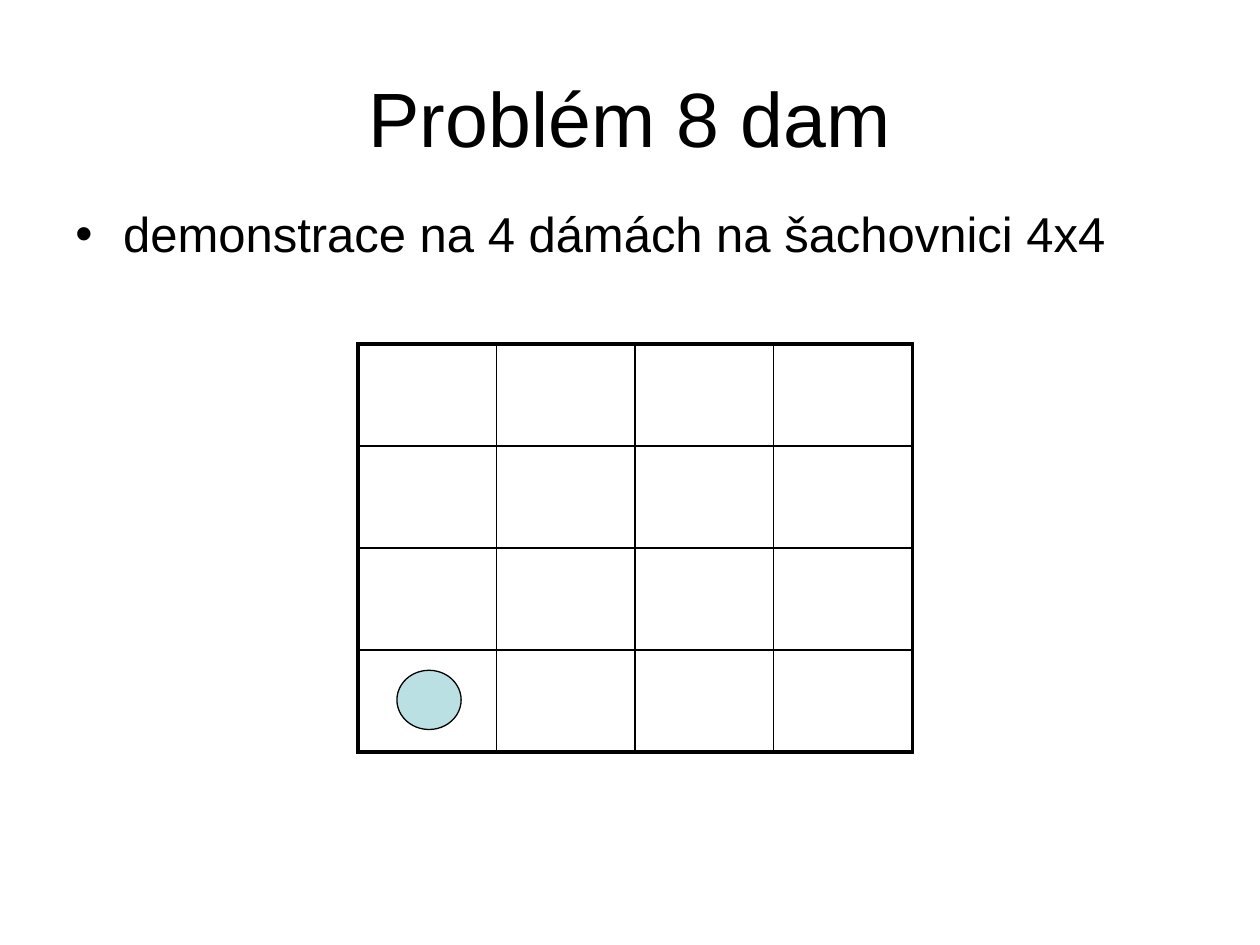
from dataclasses import dataclass

from lxml.etree import SubElement
from pptx import Presentation
from pptx.dml.color import RGBColor
from pptx.enum.shapes import MSO_SHAPE as Shape
from pptx.enum.text import MSO_ANCHOR as Anchor, PP_ALIGN as Align
from pptx.oxml.ns import qn
from pptx.util import Inches, Pt

TITLE = "Problém 8 dam"
BULLETS = ["demonstrace na 4 dámách na šachovnici 4x4"]
BOARD_SIZE = 4
QUEENS = [(3, 0)]

BOARD_LEFT, BOARD_TOP = 2.84, 2.73
CELL_WIDTH, CELL_HEIGHT = 1.1, 0.81
QUEEN_WIDTH, QUEEN_HEIGHT = 0.51, 0.47
QUEEN_INSET_X, QUEEN_INSET_Y = 0.31, 0.16


@dataclass(frozen=True)
class Theme:
    font: str = "Arial"
    ink: str = "000000"
    queen: str = "BBE0E3"
    title_size: float = 44
    body_size: float = 28
    outer_line: float = 2.25
    inner_line: float = 1
    queen_line: float = 0.75


THEME = Theme()


def add_text(page, lines, area, size, anchor, align):
    box = page.shapes.add_textbox(*map(Inches, area))
    frame = box.text_frame
    frame.word_wrap = True
    frame.vertical_anchor = anchor
    frame.text = "\n".join(lines)
    for para in frame.paragraphs:
        para.alignment = align
        for span in para.runs:
            span.font.name = THEME.font
            span.font.size = Pt(size)
            span.font.color.rgb = RGBColor.from_string(THEME.ink)
    return frame


def add_bullet(para):
    para.line_spacing = 0.9
    para.space_before = Pt(THEME.body_size * 0.2)
    properties = para._p.get_or_add_pPr()
    properties.set("marL", str(Inches(0.38)))
    properties.set("indent", str(-Inches(0.38)))
    SubElement(properties, qn("a:buFont"), typeface=THEME.font)
    SubElement(properties, qn("a:buChar"), char="•")


def add_borders(cell, row, column):
    last = BOARD_SIZE - 1
    outer_sides = {
        "a:lnL": column == 0,
        "a:lnR": column == last,
        "a:lnT": row == 0,
        "a:lnB": row == last,
    }
    properties = cell._tc.get_or_add_tcPr()
    for side, outer in outer_sides.items():
        width = THEME.outer_line if outer else THEME.inner_line
        line = SubElement(properties, qn(side), w=str(Pt(width)))
        fill = SubElement(line, qn("a:solidFill"))
        SubElement(fill, qn("a:srgbClr"), val=THEME.ink)


def add_board(page):
    table = page.shapes.add_table(
        BOARD_SIZE, BOARD_SIZE, Inches(BOARD_LEFT), Inches(BOARD_TOP),
        Inches(CELL_WIDTH * BOARD_SIZE), Inches(CELL_HEIGHT * BOARD_SIZE),
    ).table
    table.first_row = table.horz_banding = False
    for row in range(BOARD_SIZE):
        for column in range(BOARD_SIZE):
            cell = table.cell(row, column)
            add_borders(cell, row, column)
            cell.fill.background()


def add_queen(page, row, column):
    left = BOARD_LEFT + column * CELL_WIDTH + QUEEN_INSET_X
    top = BOARD_TOP + row * CELL_HEIGHT + QUEEN_INSET_Y
    queen = page.shapes.add_shape(
        Shape.OVAL, *map(Inches, (left, top, QUEEN_WIDTH, QUEEN_HEIGHT)))
    queen.shadow.inherit = False
    queen.fill.solid()
    queen.fill.fore_color.rgb = RGBColor.from_string(THEME.queen)
    queen.line.color.rgb = RGBColor.from_string(THEME.ink)
    queen.line.width = Pt(THEME.queen_line)


def main():
    deck = Presentation()
    deck.slide_width, deck.slide_height = Inches(10), Inches(7.5)
    page = deck.slides.add_slide(deck.slide_layouts[6])
    add_text(page, [TITLE], (0.5, 0.3, 9, 1.25), THEME.title_size,
             Anchor.MIDDLE, Align.CENTER)
    body = add_text(page, BULLETS, (0.5, 1.62, 8.87, 0.54), THEME.body_size,
                    Anchor.TOP, Align.LEFT)
    for para in body.paragraphs:
        add_bullet(para)
    add_board(page)
    for row, column in QUEENS:
        add_queen(page, row, column)
    deck.save("out.pptx")


if __name__ == "__main__":
    main()
